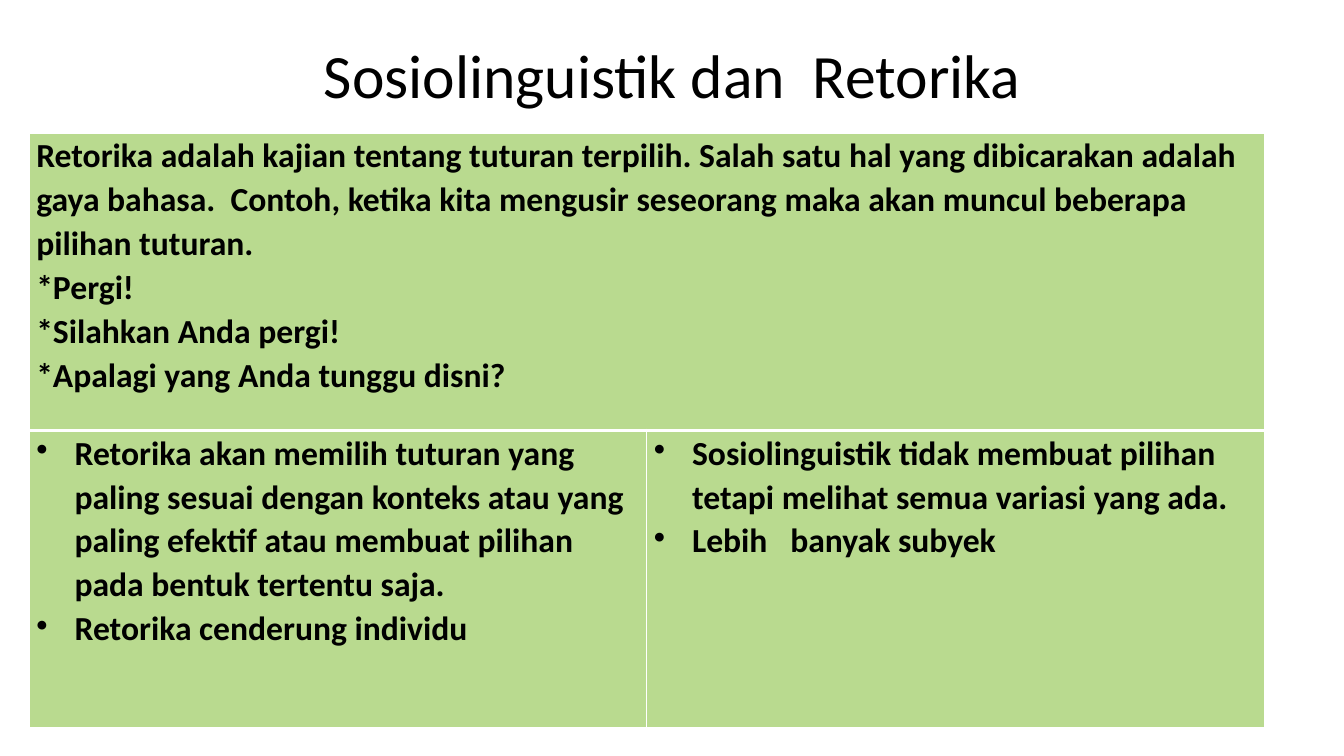
from pptx import Presentation, util as u
from pptx.dml.color import RGBColor
from pptx.enum import text
from pptx.oxml import parse_xml
from pptx.oxml.ns import nsdecls

BLACK = RGBColor(0x00, 0x00, 0x00)
WHITE = RGBColor(0xFF, 0xFF, 0xFF)
GREEN = RGBColor(0xB9, 0xDA, 0x8F)
FONT = "Calibri"
TITLE = "Sosiolinguistik dan  Retorika"
DEFINITION = [
    "Retorika adalah kajian tentang tuturan terpilih. Salah satu hal yang dibicarakan "
    "adalah gaya bahasa.  Contoh, ketika kita mengusir seseorang maka akan muncul "
    "beberapa pilihan tuturan.",
    "*Pergi!",
    "*Silahkan Anda pergi!",
    "*Apalagi yang Anda tunggu disni?",
]
RHETORIC = [
    "Retorika akan memilih tuturan yang paling sesuai dengan konteks atau yang paling "
    "efektif atau membuat pilihan pada bentuk tertentu saja.",
    "Retorika cenderung individu",
]
SOCIOLINGUISTICS = [
    "Sosiolinguistik tidak membuat pilihan tetapi melihat semua variasi yang ada.",
    "Lebih   banyak subyek",
]


def format_runs(paragraph, size, bold=False):
    """Set the font of every run in a paragraph."""
    for run in paragraph.runs:
        run.font.name, run.font.size, run.font.bold = FONT, u.Pt(size), bold
        run.font.color.rgb = BLACK


def add_bullet(paragraph):
    """Give a paragraph a hanging bullet."""
    properties = paragraph._p.get_or_add_pPr()
    properties.set("marL", str(u.Inches(0.38)))
    properties.set("indent", str(-u.Inches(0.38)))
    properties.append(parse_xml(f'<a:buChar {nsdecls("a")} char="•"/>'))


def style_cell(cell, top, bottom):
    """Set a cell's insets, white borders and green fill."""
    cell.margin_left = cell.margin_right = u.Inches(0.07)
    cell.margin_top = cell.margin_bottom = 0
    properties = cell._tc.get_or_add_tcPr()
    for side, width in (("L", 1), ("R", 1), ("T", top), ("B", bottom)):
        properties.append(parse_xml(
            f'<a:ln{side} {nsdecls("a")} w="{u.Pt(width)}"><a:solidFill>'
            f'<a:srgbClr val="{WHITE}"/></a:solidFill></a:ln{side}>'))
    cell.fill.solid()
    cell.fill.fore_color.rgb = GREEN


def write_cell(cell, lines, bulleted):
    """Write bold paragraphs into a cell."""
    cell.text_frame.text = "\n".join(lines)
    for paragraph in cell.text_frame.paragraphs:
        paragraph.line_spacing = 1.07
        if bulleted:
            add_bullet(paragraph)
        format_runs(paragraph, 24, bold=True)


def place_title(slide, left, top, width, height):
    """Place the centred title at the top of its box."""
    title = slide.shapes.title
    title.left, title.top, title.width, title.height = left, top, width, height
    frame = title.text_frame
    frame.text = TITLE
    frame.vertical_anchor = text.MSO_ANCHOR.TOP
    paragraph = frame.paragraphs[0]
    paragraph.alignment = text.PP_ALIGN.CENTER
    paragraph.line_spacing = 0.9
    format_runs(paragraph, 44)


def place_comparison(slide, left, top, width, height):
    """Place the definition above the two compared fields."""
    table = slide.shapes.add_table(2, 2, left, top, width, height).table
    table.first_row = table.horz_banding = False
    for column in range(2):
        style_cell(table.cell(0, column), 1, 3)
        style_cell(table.cell(1, column), 3, 1)
    table.cell(0, 0).merge(table.cell(0, 1))
    write_cell(table.cell(0, 0), DEFINITION, False)
    write_cell(table.cell(1, 0), RHETORIC, True)
    write_cell(table.cell(1, 1), SOCIOLINGUISTICS, True)


def main():
    """Build and save the slide."""
    presentation = Presentation()
    presentation.slide_width, presentation.slide_height = u.Inches(13.33), u.Inches(7.5)
    slide = presentation.slides.add_slide(presentation.slide_layouts[5])
    place_title(slide, u.Inches(0.92), u.Inches(0.4), u.Inches(11.5), u.Inches(1.45))
    place_comparison(slide, u.Inches(0.29), u.Inches(1.32), u.Inches(12.25), u.Inches(5.9))
    presentation.save("out.pptx")


if __name__ == "__main__":
    main()
